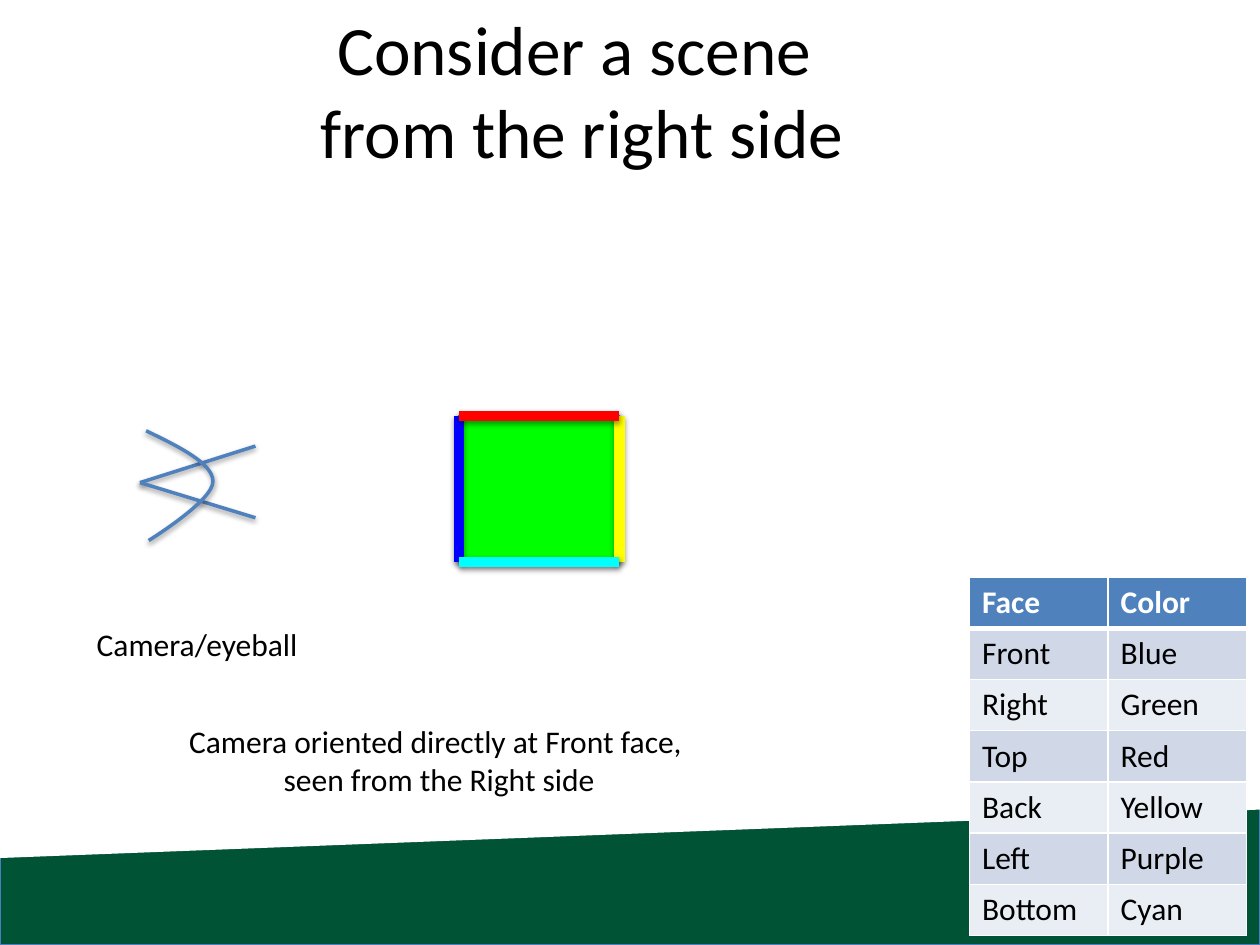
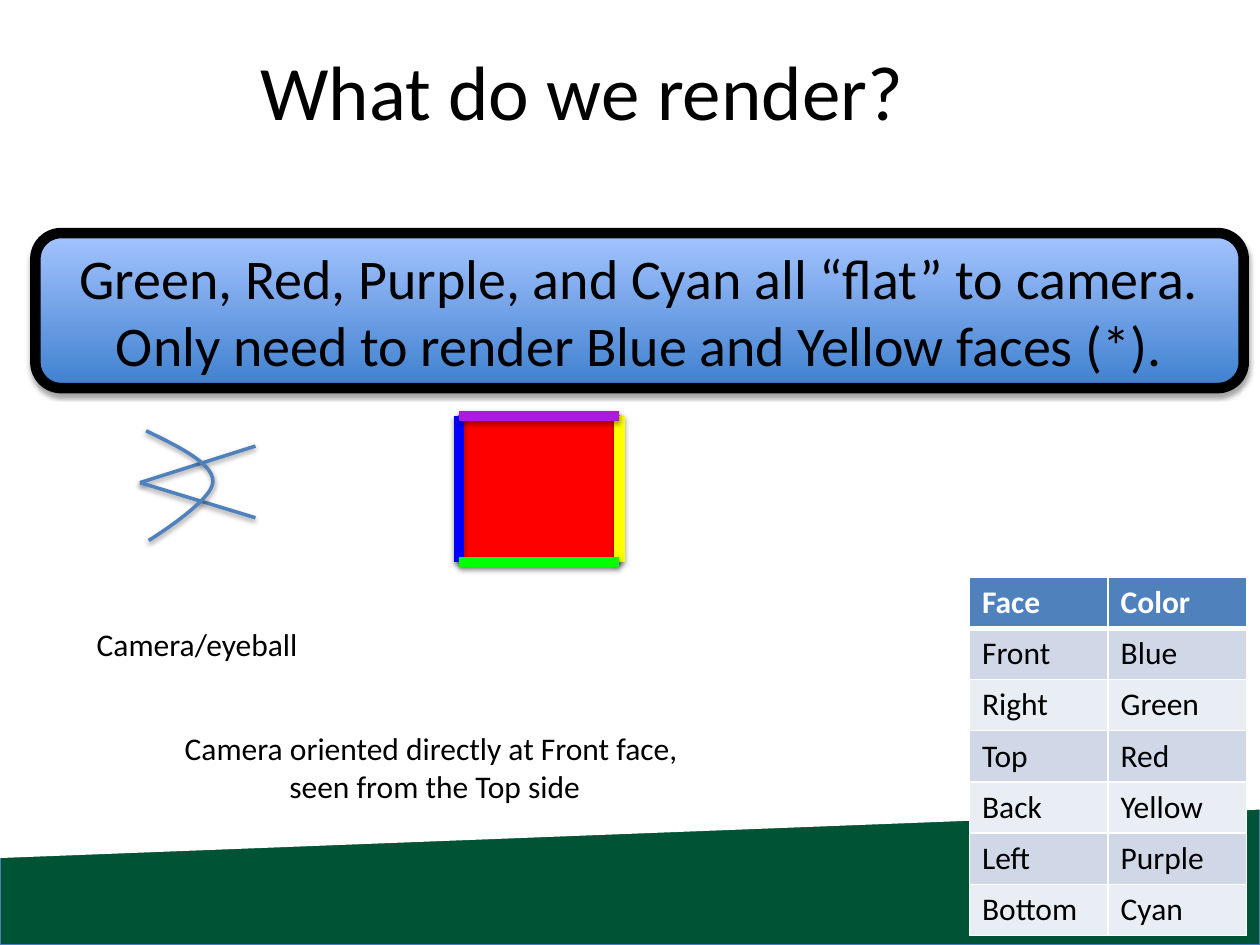
"""Build two slides that show which faces of a coloured cube a camera sees."""
import pptx
import pptx.dml.color
import pptx.enum.shapes
import pptx.enum.text
import pptx.oxml
import pptx.oxml.ns
import pptx.util

Pt = pptx.util.Pt
qn = pptx.oxml.ns.qn
SHAPE = pptx.enum.shapes.MSO_SHAPE
ALIGN = pptx.enum.text.PP_ALIGN
MIDDLE = pptx.enum.text.MSO_ANCHOR.MIDDLE

COLORS = {
    "Blue": "0000FF", "Green": "00FF00", "Red": "FF0000",
    "Yellow": "FFFF00", "Purple": "AC1BDD", "Cyan": "00FFFF",
    "black": "000000", "white": "FFFFFF", "band": "005334",
    "accent": "4F81BD", "outline": "4B7EBC",
    "odd row": "D0D8E8", "even row": "E9EDF4",
    "gradient bottom": "3F80CE", "gradient top": "A4C4FF",
}
FACE_HEADER = ("Face", "Color")
FACES = {"Front": "Blue", "Right": "Green", "Top": "Red",
         "Back": "Yellow", "Left": "Purple", "Bottom": "Cyan"}
SCENES = [
    {"title": "Consider a scene \vfrom the right side", "title size": 39.6,
     "caption": ["Camera oriented directly at Front face, ",
                 "seen from the Right side"],
     "caption place": (88.6, 409, 324.7, 51),
     "middle": "Right",
     "edges": {"left": "Front", "right": "Back", "bottom": "Bottom", "top": "Top"}},
    {"title": "What do we render?", "title size": 44,
     "caption": ["Camera oriented directly at Front face, ",
                 "seen from the Top side"],
     "caption place": (86.1, 413.2, 324.7, 51),
     "callout": "Green, Red, Purple, and Cyan all “flat” to camera. "
                "Only need to render Blue and Yellow faces (*).",
     "middle": "Top",
     "edges": {"left": "Front", "right": "Back", "bottom": "Right", "top": "Left"}},
]

SLIDE_SIZE = (720, 540)
TITLE_PLACE = (11.5, 12.2, 642.2, 77.8)
BAND_PLACE = (0, 403.9, 720, 136.1)
WEDGE_PLACE = (276.5, 46.8, 167, 720)
CALLOUT_PLACE = (20.2, 133.2, 690.5, 88.6)
CUBE_PLACE = (262.2, 237.6, 91.8, 83.5)
LABEL_PLACE = (48.2, 353.5, 141.8, 28.8)
TABLE_PLACE = (554, 329.8, 158.4, 204.8)
EYE = (80, 275.8)
EYE_RAY_ENDS = [(146, 254.9), (146, 295.9)]
EYE_CURVE = [(83.5, 246.2), (103, 255.6), (121.7, 265), (121.7, 275),
             (122.4, 285.8), (85, 308.9), (85, 308.9)]
SHAPE_SHADOW = (3.1, 1.8, 35)
LINE_SHADOW = (3.1, 1.6, 38)


def rgb(name):
    return pptx.dml.color.RGBColor.from_string(COLORS[name])


def points(values):
    return [Pt(value) for value in values]


def set_line(shape, color, width):
    shape.line.color.rgb = rgb(color)
    shape.line.width = Pt(width)


def add_shadow(shape, shadow):
    blur, distance, opacity = shadow
    shape._element.spPr.append(pptx.oxml.parse_xml(
        f'<a:effectLst {pptx.oxml.ns.nsdecls("a")}>'
        f'<a:outerShdw blurRad="{Pt(blur)}" dist="{Pt(distance)}" dir="5400000" '
        f'rotWithShape="0"><a:srgbClr val="{COLORS["black"]}">'
        f'<a:alpha val="{opacity * 1000}"/></a:srgbClr></a:outerShdw></a:effectLst>'))


def write(text_frame, paragraphs, size, color="black", align=ALIGN.LEFT, bold=False):
    text_frame.text = "\n".join(paragraphs)
    font_format = {"name": "Calibri", "size": Pt(size), "bold": bold}
    for paragraph in text_frame.paragraphs:
        paragraph.alignment = align
        for run in paragraph.runs:
            for attribute, value in font_format.items():
                setattr(run.font, attribute, value)
            run.font.color.rgb = rgb(color)


def add_text(slide, place, paragraphs, size, align=ALIGN.LEFT, wrap=False):
    text_frame = slide.shapes.add_textbox(*points(place)).text_frame
    text_frame.word_wrap = wrap
    write(text_frame, paragraphs, size, align=align)
    return text_frame


def add_filled(slide, preset, place, color):
    shape = slide.shapes.add_shape(preset, *points(place))
    shape.fill.solid()
    shape.fill.fore_color.rgb = rgb(color)
    return shape


def add_outlined_box(slide, place, color):
    box = add_filled(slide, SHAPE.RECTANGLE, place, color)
    set_line(box, "outline", 0.75)
    add_shadow(box, SHAPE_SHADOW)


def add_line(slide, start, end, color, width):
    line = slide.shapes.add_connector(
        pptx.enum.shapes.MSO_CONNECTOR.STRAIGHT, *points(start + end))
    set_line(line, color, width)
    add_shadow(line, LINE_SHADOW)


def add_band(slide):
    add_outlined_box(slide, BAND_PLACE, "band")
    wedge = add_filled(slide, SHAPE.PARALLELOGRAM, WEDGE_PLACE, "white")
    wedge.adjustments[0] = 0.166
    wedge.rotation = 90
    wedge._element.spPr.xfrm.set("flipH", "1")
    wedge.line.fill.background()
    wedge.shadow.inherit = False


def add_camera(slide):
    for end in EYE_RAY_ENDS:
        add_line(slide, EYE, end, "accent", 2)
    builder = slide.shapes.build_freeform(*points(EYE_CURVE[0]))
    builder.add_line_segments([points(point) for point in EYE_CURVE[1:]], close=False)
    lens = builder.convert_to_shape()
    segments = list(lens._element.spPr.iter(qn("a:lnTo")))
    for first in range(0, len(segments), 3):
        curve = pptx.oxml.parse_xml(f'<a:cubicBezTo {pptx.oxml.ns.nsdecls("a")}/>')
        segments[first].addprevious(curve)
        for segment in segments[first:first + 3]:
            curve.append(segment[0])
            segment.getparent().remove(segment)
    lens.fill.background()
    set_line(lens, "accent", 2)
    add_shadow(lens, LINE_SHADOW)
    add_text(slide, LABEL_PLACE, ["Camera/eyeball"], 18)


def fill_cell(cell, text, row):
    header = row == 0
    write(cell.text_frame, [text], 18, "white" if header else "black", bold=header)
    widths = {"L": 1, "R": 1, "T": 3 if row == 1 else 1, "B": 3 if header else 1}
    for side, width in widths.items():
        cell._tc.get_or_add_tcPr().append(pptx.oxml.parse_xml(
            f'<a:ln{side} {pptx.oxml.ns.nsdecls("a")} w="{Pt(width)}"><a:solidFill>'
            f'<a:srgbClr val="{COLORS["white"]}"/></a:solidFill></a:ln{side}>'))
    cell.fill.solid()
    cell.fill.fore_color.rgb = rgb(
        "accent" if header else "odd row" if row % 2 else "even row")


def add_face_table(slide):
    rows = [FACE_HEADER, *FACES.items()]
    table = slide.shapes.add_table(
        len(rows), len(FACE_HEADER), *points(TABLE_PLACE)).table
    for row, texts in enumerate(rows):
        for column, text in enumerate(texts):
            fill_cell(table.cell(row, column), text, row)


def add_callout(slide, text):
    callout = slide.shapes.add_shape(SHAPE.ROUNDED_RECTANGLE, *points(CALLOUT_PLACE))
    callout.fill.gradient()
    callout.fill.gradient_angle = 90
    for stop, color in zip(callout.fill.gradient_stops,
                           ("gradient bottom", "gradient top")):
        stop.color.rgb = rgb(color)
    set_line(callout, "black", 6)
    add_shadow(callout, SHAPE_SHADOW)
    callout.text_frame.word_wrap = True
    callout.text_frame.vertical_anchor = MIDDLE
    write(callout.text_frame, [text], 32, align=ALIGN.CENTER)


def add_cube_edges(slide, edges):
    left, top, width, height = CUBE_PLACE
    right, bottom = left + width, top + height
    ends = {"left": ((left, top), (left, bottom)),
            "right": ((right, top), (right, bottom)),
            "bottom": ((left, bottom), (right, bottom)),
            "top": ((left, top), (right, top))}
    for side, face in edges.items():
        add_line(slide, *ends[side], FACES[face], 6)


def add_scene(presentation, scene):
    slide = presentation.slides.add_slide(presentation.slide_layouts[6])
    add_band(slide)
    title = add_text(slide, TITLE_PLACE, [scene["title"]], scene["title size"],
                     ALIGN.CENTER, wrap=True)
    title.vertical_anchor = MIDDLE
    add_camera(slide)
    add_face_table(slide)
    add_outlined_box(slide, CUBE_PLACE, FACES[scene["middle"]])
    add_text(slide, scene["caption place"], scene["caption"], 18, ALIGN.CENTER)
    if "callout" in scene:
        add_callout(slide, scene["callout"])
    add_cube_edges(slide, scene["edges"])


def main():
    presentation = pptx.Presentation()
    presentation.slide_width, presentation.slide_height = points(SLIDE_SIZE)
    for scene in SCENES:
        add_scene(presentation, scene)
    presentation.save("out.pptx")


if __name__ == "__main__":
    main()
